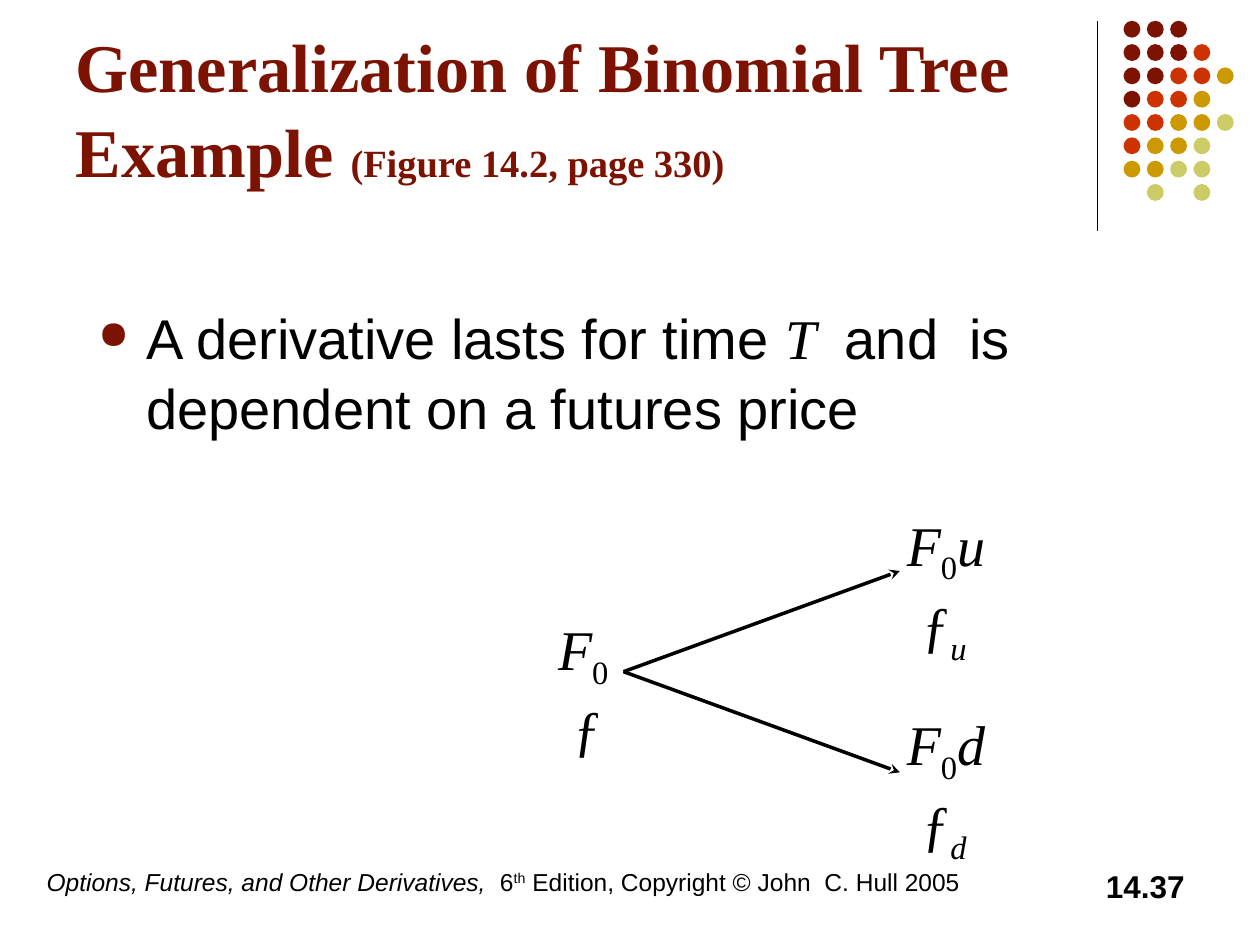
from dataclasses import dataclass

import pptx
import pptx.dml.color
import pptx.enum.shapes
import pptx.enum.text
import pptx.oxml.ns
import pptx.util
from lxml import etree

Cm = pptx.util.Cm
qn = pptx.oxml.ns.qn
RGB = pptx.dml.color.RGBColor.from_string


@dataclass(frozen=True)
class Theme:
    sans: str = "Arial"
    serif: str = "Times New Roman"
    text: str = "000000"
    maroon: str = "7C1302"
    red: str = "CC3300"
    gold: str = "CC9900"
    olive: str = "CCCC66"
    title: int = 39
    reference: int = 22
    body: int = 32
    number: int = 18
    footer: int = 14
    spacing: float = 1.05


theme = Theme()


def add_run(p, text, size, font=theme.sans, color=theme.text,
            bold=False, italic=False, baseline=0):
    """Append a run; baseline is a percentage, negative for subscripts."""
    r = p.add_run()
    r.text = text
    r.font.size = pptx.util.Pt(size)
    r.font.name = font
    r.font.bold = bold
    r.font.italic = italic
    r.font.color.rgb = RGB(color)
    if baseline:
        r._r.get_or_add_rPr().set("baseline", str(baseline * 1000))


def add_line(s, x1, y1, x2, y2, width, arrow=False):
    line = s.shapes.add_connector(pptx.enum.shapes.MSO_CONNECTOR.STRAIGHT,
                                  Cm(x1), Cm(y1), Cm(x2), Cm(y2))
    line.line.color.rgb = RGB(theme.text)
    line.line.width = pptx.util.Pt(width)
    if arrow:
        etree.SubElement(line.line._get_or_add_ln(), qn("a:tailEnd"), type="stealth")
    etree.SubElement(line._element.spPr, qn("a:effectLst"))


prs = pptx.Presentation()
prs.slide_width, prs.slide_height = Cm(25.4), Cm(19.05)
s = prs.slides.add_slide(prs.slide_layouts[5])

# Corner ornament: a rule and a grid of dots
add_line(s, 22.12, 0.43, 22.12, 4.65, 0.75)
dot_colors = {"m": theme.maroon, "r": theme.red, "g": theme.gold, "o": theme.olive}
dot_rows = ["mmm", "mmmr", "mmrrg", "mrrg", "rrggo", "rggo", "ggoo", " o o"]
pitch = 0.47
for row, keys in enumerate(dot_rows):
    for col, key in enumerate(keys):
        if key == " ":
            continue
        sp = s.shapes.add_shape(pptx.enum.shapes.MSO_SHAPE.OVAL,
                                Cm(22.65 + col * pitch), Cm(0.42 + row * pitch),
                                Cm(0.34), Cm(0.34))
        sp.shadow.inherit = False
        sp.fill.solid()
        sp.fill.fore_color.rgb = RGB(dot_colors[key])
        sp.line.fill.background()

# Title
title = s.shapes.title
title.left, title.top, title.width, title.height = Cm(1.27), Cm(0.33), Cm(20.96), Cm(3.6)
tf = title.text_frame
tf.word_wrap = True
tf.auto_size = pptx.enum.text.MSO_AUTO_SIZE.NONE
tf.vertical_anchor = pptx.enum.text.MSO_ANCHOR.MIDDLE
p = tf.paragraphs[0]
p.alignment = pptx.enum.text.PP_ALIGN.LEFT
p.line_spacing = theme.spacing
add_run(p, "Generalization of Binomial Tree Example ", theme.title,
        theme.serif, theme.maroon, bold=True)
add_run(p, "(Figure 14.2, page 330)", theme.reference,
        theme.serif, theme.maroon, bold=True)

# Bulleted statement
body = s.shapes.add_textbox(Cm(1.73), Cm(5.92), Cm(21.97), Cm(11.13))
body.text_frame.word_wrap = True
p = body.text_frame.paragraphs[0]
p.line_spacing = theme.spacing
pPr = p._p.get_or_add_pPr()
pPr.set("marL", str(Cm(0.97)))
pPr.set("indent", str(-Cm(0.97)))
bullet_color = etree.SubElement(pPr, qn("a:buClr"))
etree.SubElement(bullet_color, qn("a:srgbClr"), val=theme.maroon)
etree.SubElement(pPr, qn("a:buSzPct"), val="70000")
etree.SubElement(pPr, qn("a:buChar"), char="●")
add_run(p, "A derivative lasts for time ", theme.body)
add_run(p, "T ", theme.body, theme.serif, italic=True)
add_run(p, " and  is dependent on a futures price", theme.body)

# Binomial tree: branches, then futures price and derivative value at each node
for end_y in (11.51, 15.57):
    add_line(s, 12.57, 13.54, 18.14, end_y, 2, arrow=True)

nodes = [("u", 18.03, 10.08), ("d", 18.03, 14.1), ("", 11.0, 12.19)]
for move, x, y in nodes:
    node = s.shapes.add_textbox(Cm(x), Cm(y), Cm(2.13), Cm(2.97))
    tf = node.text_frame
    tf.word_wrap = False
    price, value = tf.paragraphs[0], tf.add_paragraph()
    price.line_spacing = value.line_spacing = theme.spacing
    add_run(price, "F", theme.body, theme.serif, italic=True)
    add_run(price, "0", theme.body, theme.serif, baseline=-25)
    add_run(value, " ", theme.body)
    add_run(value, "ƒ", theme.body, theme.serif)
    if move:
        add_run(price, move, theme.body, theme.serif, italic=True)
        add_run(value, move, theme.body, theme.serif, italic=True, baseline=-25)

# Footer and slide number
footer = s.shapes.add_textbox(Cm(0.69), Cm(17.35), Cm(21.0), Cm(1.27))
footer.text_frame.word_wrap = True
p = footer.text_frame.paragraphs[0]
add_run(p, "Options, Futures, and Other Derivatives, ", theme.footer, italic=True)
add_run(p, " 6", theme.footer)
add_run(p, "th", theme.footer, baseline=30)
add_run(p, " Edition, Copyright © John  C. Hull 2005", theme.footer)

number = s.shapes.add_textbox(Cm(18.21), Cm(17.35), Cm(5.92), Cm(1.27))
number.text_frame.word_wrap = True
p = number.text_frame.paragraphs[0]
p.alignment = pptx.enum.text.PP_ALIGN.RIGHT
add_run(p, "14.37", theme.number, bold=True)

prs.save("out.pptx")
